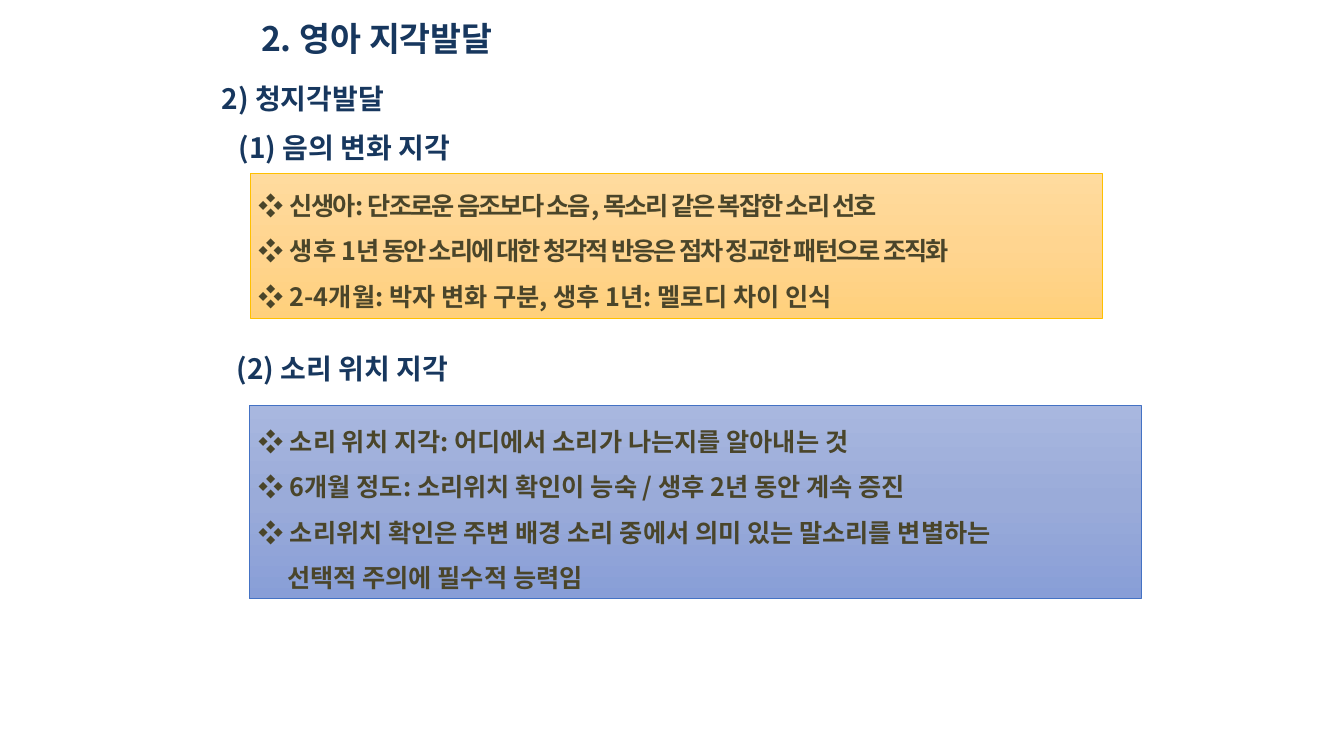
from copy import deepcopy

from pptx import Presentation
from pptx.dml.color import RGBColor
from pptx.enum.shapes import MSO_SHAPE as Shape
from pptx.enum.text import MSO_ANCHOR as Anchor, MSO_AUTO_SIZE as AutoSize, PP_ALIGN as Align
from pptx.oxml.ns import qn
from pptx.util import Inches, Pt

FONT = "Noto Sans CJK KR"
COLORS = {
    "heading": "17375E", "body": "4A452A",
    "sound_line": "FFC000", "place_line": "4472C4",
}
GRADIENTS = {
    "sound": ["FFDB9E", "FFD590", "FFD07C"],
    "place": ["A8B7DF", "9AABD9", "889ED7"],
}
MARK = ("❖ ", False, 0)
TIGHT = -1.3
SOUND_POINTS = [
    [MARK, ("신생아: 단조로운 음조보다 소음, 목소리 같은 복잡한 소리 선호", True, TIGHT)],
    [MARK, ("생후 ", True, 0),
     ("1년 동안 소리에 대한 청각적 반응은 점차 정교한 패턴으로 조직화", True, TIGHT)],
    [MARK, ("2-4개월: 박자 변화 구분, 생후 1년: 멜로디 차이 인식", True, 0)],
]
PLACE_POINTS = [
    [MARK, ("소리 위치 지각: 어디에서 소리가 나는지를 알아내는 것", True, 0)],
    [MARK, ("6개월 정도: 소리위치 확인이 능숙 / 생후 2년 동안 계속 증진", True, 0)],
    [MARK, ("소리위치 확인은 주변 배경 소리 중에서 의미 있는 말소리를 변별하는", True, 0)],
    [("선택적 주의에 필수적 능력임", True, 0)],
]
HEADINGS = [
    ("2) 청지각발달", 2.1, 0.76),
    ("(1) 음의 변화 지각", 2.27, 1.25),
    ("(2) 소리 위치 지각", 2.25, 3.44),
]


def add_span(para, text, size, color, bold=True, spacing=0):
    """Add one styled run to a paragraph."""
    span = para.add_run()
    span.text = text
    font = span.font
    font.name, font.size, font.bold = FONT, Pt(size), bold
    font.color.rgb = RGBColor.from_string(COLORS[color])
    props = span._r.get_or_add_rPr()
    east_asian = props.makeelement(qn("a:ea"), {"typeface": FONT})
    props.find(qn("a:latin")).addnext(east_asian)
    if spacing:
        props.set("spc", str(round(spacing * 100)))


def set_indent(para, left, first=0):
    """Set the left margin and first-line indent of a paragraph in inches."""
    props = para._p.get_or_add_pPr()
    props.set("marL", str(Inches(left)))
    props.set("indent", str(Inches(first)))


def write_heading(box, text, size):
    """Write a heading with a hanging indent into a box."""
    frame = box.text_frame
    frame.word_wrap = True
    frame.auto_size = AutoSize.NONE
    frame.vertical_anchor = Anchor.TOP
    para = frame.paragraphs[0]
    para.alignment = Align.LEFT
    set_indent(para, 0.5, -0.5)
    add_span(para, text, size, "heading")


def write_points(box, points):
    """Write marked points, aligning an unmarked line with the text above."""
    frame = box.text_frame
    frame.word_wrap = True
    for index, spans in enumerate(points):
        para = frame.add_paragraph() if index else frame.paragraphs[0]
        para.alignment = Align.LEFT
        para.line_spacing = 1.5
        if spans[0] != MARK:
            set_indent(para, 0.28)
        for text, bold, spacing in spans:
            add_span(para, text, 18, "body", bold, spacing)


def add_panel(page, name, left, top, width, height):
    """Add a rectangle with a three-stop vertical gradient."""
    panel = page.shapes.add_shape(
        Shape.RECTANGLE, Inches(left), Inches(top), Inches(width), Inches(height))
    panel.shadow.inherit = False
    panel.line.color.rgb = RGBColor.from_string(COLORS[f"{name}_line"])
    panel.line.width = Pt(0.5)
    fill = panel.fill
    fill.gradient()
    fill.gradient_angle = 270
    first = next(panel._element.spPr.iter(qn("a:gs")))
    first.addnext(deepcopy(first))
    for index, (stop, color) in enumerate(zip(fill.gradient_stops, GRADIENTS[name])):
        stop.position = index / 2
        stop.color.rgb = RGBColor.from_string(color)
    return panel


def add_title(page, left, top, width, height):
    """Place and write the slide title."""
    title = page.shapes.title
    title.left, title.top = Inches(left), Inches(top)
    title.width, title.height = Inches(width), Inches(height)
    write_heading(title, "2. 영아 지각발달", 24)


def add_text_box(page, left, top, width, height):
    """Add an empty text box."""
    return page.shapes.add_textbox(
        Inches(left), Inches(top), Inches(width), Inches(height))


def add_sound_section(page, left, top, width, height):
    """Add the panel and points on perceiving changes in sound."""
    add_panel(page, "sound", left, top, width, height)
    write_points(add_text_box(page, left - 0.01, top - 0.03, width, height + 0.02),
                 SOUND_POINTS)


def add_place_section(page, left, top, width, height):
    """Add the panel with points on locating sound."""
    panel = add_panel(page, "place", left, top, width, height)
    panel.text_frame.vertical_anchor = Anchor.MIDDLE
    write_points(panel, PLACE_POINTS)


def main():
    """Build and save the slide."""
    deck = Presentation()
    deck.slide_width, deck.slide_height = Inches(13.33), Inches(7.5)
    page = deck.slides.add_slide(deck.slide_layouts[5])
    add_title(page, 2.49, 0.13, 6.38, 0.5)
    for text, left, top in HEADINGS:
        write_heading(add_text_box(page, left, top, 6.38, 0.44), text, 20)
    add_sound_section(page, 2.48, 1.72, 8.45, 1.44)
    add_place_section(page, 2.47, 4.02, 8.85, 1.92)
    deck.save("out.pptx")


if __name__ == "__main__":
    main()
